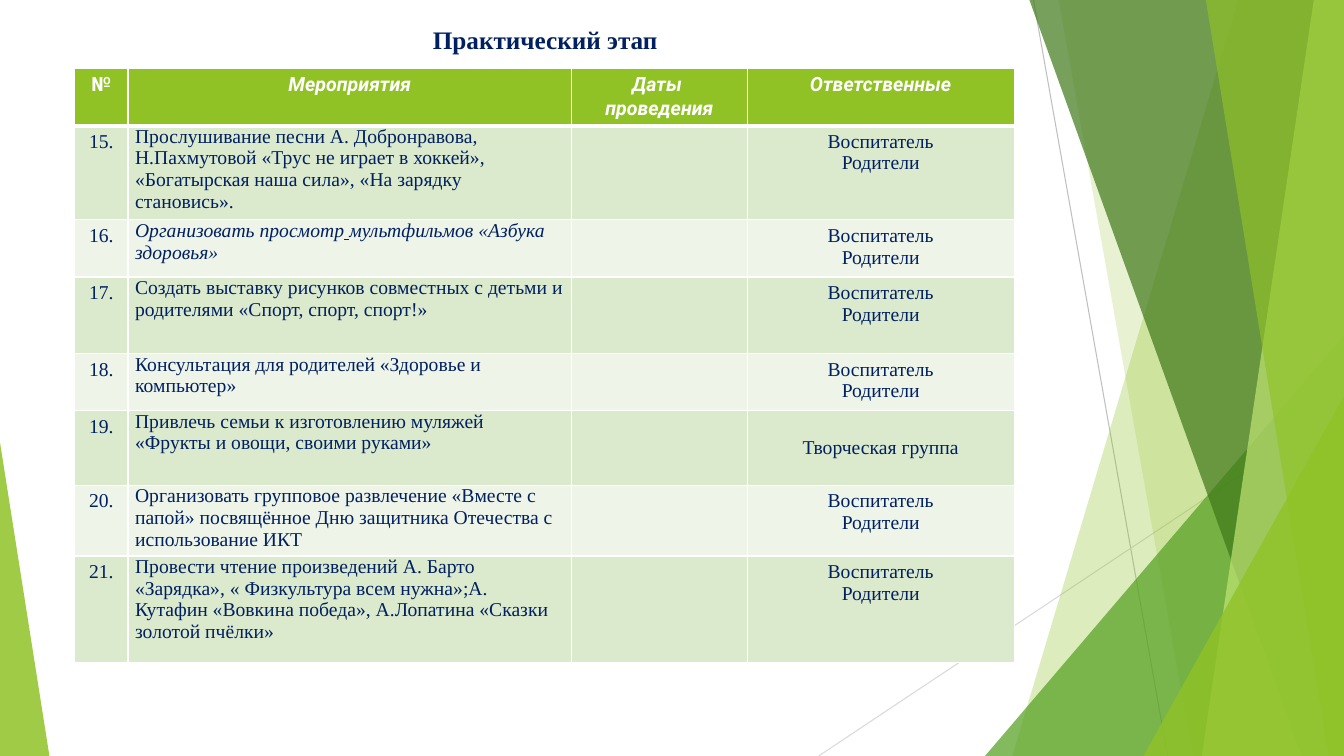
from dataclasses import dataclass

from lxml.etree import SubElement
from pptx import Presentation
from pptx.dml.color import RGBColor
from pptx.enum.shapes import MSO_CONNECTOR, MSO_SHAPE
from pptx.enum.text import MSO_ANCHOR as Anchor, PP_ALIGN as Align
from pptx.oxml.ns import qn
from pptx.util import Inches, Pt

WIDTH, HEIGHT = 13.33, 7.5
GREEN, NAVY, WHITE = "90C226", "002060", "FFFFFF"
BAND_FILLS = ("DBE9CD", "EEF4E8")
SERIF, SANS = "Times New Roman", "Roboto"
COLUMN_WIDTHS = (0.53, 4.4, 1.74, 2.65)
HEADER_HEIGHT = 0.55
HEADINGS = ("№", "Мероприятия", "Даты \nпроведения", "Ответственные")
PARENTS = "Воспитатель\nРодители"


@dataclass(frozen=True)
class Ray:
    start: tuple[float, float]
    end: tuple[float, float]
    color: str


@dataclass(frozen=True)
class Band:
    """A slanted left edge, filled out to the right side of the slide."""
    top_x: float
    bottom_x: float
    color: str
    opacity: int


@dataclass(frozen=True)
class Corner:
    """A right triangle standing on the bottom of the slide."""
    left: float
    top: float
    width: float
    apex: float
    color: str
    opacity: int


@dataclass(frozen=True)
class Step:
    """A table row; "_" in the activity marks an underlined space."""
    number: int
    activity: str
    height: float
    responsible: str = PARENTS
    italic: bool = False


RAYS = (
    Ray((10.25, 0), (11.58, HEIGHT), "BFBFBF"),
    Ray((WIDTH, 4.03), (8.12, HEIGHT), "D9D9D9"),
)
FACETS = (
    Band(12.28, 10.04, GREEN, 30),
    Band(10.5, 11.83, GREEN, 20),
    Corner(9.77, 3.33, 3.56, 1, "54A021", 72),
    Band(10.21, 12.91, "3F7819", 70),
    Band(13.03, 11.92, "C0E474", 70),
    Band(11.96, 13.18, GREEN, 65),
    Corner(11.34, 3.93, 1.99, 1, GREEN, 80),
    Corner(0, 4.39, 0.49, 0, GREEN, 85),
)
STEPS = (
    Step(15, "Прослушивание песни А. Добронравова, Н.Пахмутовой «Трус не играет в хоккей», "
             "«Богатырская наша сила», «На зарядку становись».", 0.86),
    Step(16, "Организовать просмотр_мультфильмов «Азбука здоровья»", 0.53, italic=True),
    Step(17, "Создать выставку рисунков совместных с детьми и родителями "
             "«Спорт, спорт, спорт!»", 0.76),
    Step(18, "Консультация для родителей «Здоровье и компьютер»", 0.53),
    Step(19, "Привлечь семьи к изготовлению муляжей «Фрукты и овощи, своими руками»", 0.74,
         "Творческая группа"),
    Step(20, "Организовать групповое развлечение «Вместе с папой» посвящённое "
             "Дню защитника Отечества с использование ИКТ", 0.65),
    Step(21, "Провести чтение произведений А. Барто «Зарядка», « Физкультура всем нужна»;"
             "А. Кутафин «Вовкина победа», А.Лопатина «Сказки золотой пчёлки»", 1.06),
)


def rgb(color: str) -> RGBColor:
    return RGBColor.from_string(color)


def draw_ray(shapes, ray: Ray) -> None:
    points = map(Inches, (*ray.start, *ray.end))
    line = shapes.add_connector(MSO_CONNECTOR.STRAIGHT, *points)
    line.line.color.rgb = rgb(ray.color)
    line.line.width = Pt(0.75)
    SubElement(line._element.spPr, qn("a:effectLst"))


def draw_facet(shapes, facet: Band | Corner) -> None:
    if isinstance(facet, Band):
        outline = shapes.build_freeform(Inches(facet.top_x), 0)
        outline.add_line_segments([
            (Inches(WIDTH), 0),
            (Inches(WIDTH), Inches(HEIGHT)),
            (Inches(facet.bottom_x), Inches(HEIGHT)),
        ])
        shape = outline.convert_to_shape()
    else:
        box = map(Inches, (facet.left, facet.top, facet.width, HEIGHT - facet.top))
        shape = shapes.add_shape(MSO_SHAPE.ISOSCELES_TRIANGLE, *box)
        shape.adjustments[0] = facet.apex
    shape.shadow.inherit = False
    shape.line.fill.background()
    shape.fill.solid()
    shape.fill.fore_color.rgb = rgb(facet.color)
    color = shape._element.spPr.find(".//" + qn("a:srgbClr"))
    SubElement(color, qn("a:alpha"), val=str(facet.opacity * 1000))


def set_font(font, name: str, size: float, color: str, bold=False, italic=False) -> None:
    font.name, font.size = name, Pt(size)
    font.bold, font.italic = bold, italic
    font.color.rgb = rgb(color)


def style_cell(cell, fill: str, bottom: float = 1) -> None:
    """Gives a cell white borders and a plain fill."""
    properties = cell._tc.get_or_add_tcPr()
    for side, width in (("L", 1), ("R", 1), ("T", 1), ("B", bottom)):
        border = SubElement(properties, qn(f"a:ln{side}"), w=str(Pt(width)))
        SubElement(SubElement(border, qn("a:solidFill")), qn("a:srgbClr"), val=WHITE)
    cell.fill.solid()
    cell.fill.fore_color.rgb = rgb(fill)


def write_centered(cell, text: str, name: str, color: str, bold=False, italic=False) -> None:
    cell.text = text
    for paragraph in cell.text_frame.paragraphs:
        paragraph.alignment = Align.CENTER
        set_font(paragraph.font, name, 14, color, bold, italic)


def write_activity(cell, step: Step) -> None:
    cell.margin_left = cell.margin_right = Inches(0.07)
    cell.margin_top = cell.margin_bottom = 0
    paragraph = cell.text_frame.paragraphs[0]
    set_font(paragraph.font, SERIF, 14, NAVY, italic=step.italic)
    for index, part in enumerate(step.activity.split("_")):
        if index:
            gap = paragraph.add_run()
            gap.text = " "
            gap.font.underline = True
        paragraph.add_run().text = part


def draw_plan(shapes) -> None:
    heights = [HEADER_HEIGHT, *(step.height for step in STEPS)]
    box = map(Inches, (0.74, 0.68, sum(COLUMN_WIDTHS), sum(heights)))
    plan = shapes.add_table(len(heights), len(COLUMN_WIDTHS), *box).table
    plan.horz_banding = False
    for column, width in zip(plan.columns, COLUMN_WIDTHS):
        column.width = Inches(width)
    for row, height in zip(plan.rows, heights):
        row.height = Inches(height)

    for index, heading in enumerate(HEADINGS):
        cell = plan.cell(0, index)
        style_cell(cell, GREEN, bottom=3)
        write_centered(cell, heading, SANS, WHITE, bold=True, italic=index > 0)

    for index, step in enumerate(STEPS):
        cells = plan.rows[index + 1].cells
        for cell in cells:
            style_cell(cell, BAND_FILLS[index % 2])
        number, activity, _, responsible = cells
        write_centered(number, f"{step.number}.", SERIF, NAVY)
        write_activity(activity, step)
        write_centered(responsible, step.responsible, SERIF, NAVY)
        if step.responsible != PARENTS:
            responsible.vertical_anchor = Anchor.MIDDLE


def draw_title(shapes) -> None:
    title = shapes.add_textbox(*map(Inches, (0.74, 0.19, 9.4, 0.45))).text_frame
    title.word_wrap = True
    title.text = "Практический этап "
    heading = title.paragraphs[0]
    heading.alignment = Align.CENTER
    set_font(heading.font, SERIF, 18, NAVY, bold=True)


def main() -> None:
    deck = Presentation()
    deck.slide_width, deck.slide_height = Inches(WIDTH), Inches(HEIGHT)
    shapes = deck.slides.add_slide(deck.slide_layouts[6]).shapes
    for ray in RAYS:
        draw_ray(shapes, ray)
    for facet in FACETS:
        draw_facet(shapes, facet)
    draw_title(shapes)
    draw_plan(shapes)
    deck.save("out.pptx")


if __name__ == "__main__":
    main()
